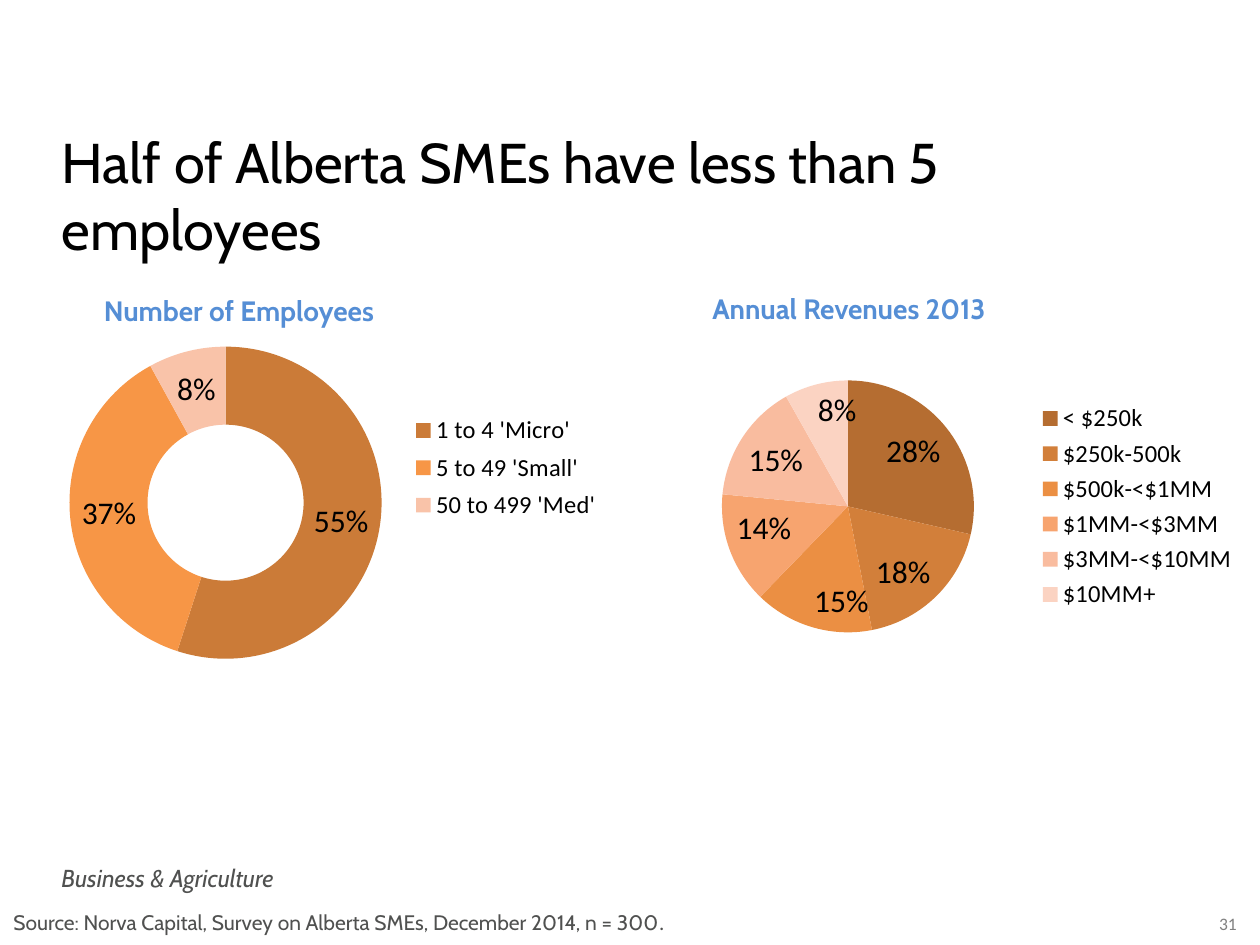
from lxml import etree
from pptx import Presentation
from pptx import util as u
from pptx.chart import data as chart_data
from pptx.dml.color import RGBColor
from pptx.enum import chart as ch, text
from pptx.oxml import ns

PX = 914400 / 126
BLACK = RGBColor(0x00, 0x00, 0x00)
BLUE = RGBColor(0x55, 0x8E, 0xD5)
DARK = RGBColor(0x50, 0x51, 0x50)
GREY = RGBColor(0x80, 0x80, 0x80)
EMPLOYEE_COLORS = [RGBColor(0xCB, 0x7B, 0x38), RGBColor(0xF7, 0x96, 0x46),
                   RGBColor(0xF9, 0xC3, 0xA9)]
REVENUE_COLORS = [RGBColor(0xB5, 0x6D, 0x31), RGBColor(0xD2, 0x7F, 0x3A),
                  RGBColor(0xEB, 0x8F, 0x43), RGBColor(0xF7, 0xA4, 0x6F),
                  RGBColor(0xF9, 0xBC, 0x9F), RGBColor(0xFB, 0xD3, 0xC2)]


def px(*lengths):
    return [u.Emu(round(n * PX)) for n in lengths]


def set_layout(parent, index, box, inner=False):
    """Place a chart part by fractions of the chart area."""
    for old in parent.findall(ns.qn("c:layout")):
        parent.remove(old)
    layout = etree.Element(ns.qn("c:layout"))
    manual = etree.SubElement(layout, ns.qn("c:manualLayout"))
    items = [("layoutTarget", "inner")] if inner else []
    items += [("xMode", "edge"), ("yMode", "edge"), *zip("xywh", box)]
    for tag, value in items:
        etree.SubElement(manual, ns.qn("c:" + tag)).set("val", str(value))
    parent.insert(index, layout)


prs = Presentation()
prs.slide_width, prs.slide_height = px(1260, 945)
s = prs.slides.add_slide(prs.slide_layouts[5])

# Title
title = s.shapes.title
title.left, title.top, title.width, title.height = px(49, 121, 1162, 100)
tf = title.text_frame
tf.word_wrap = True
tf.auto_size = text.MSO_AUTO_SIZE.NONE
tf.vertical_anchor = text.MSO_ANCHOR.TOP
p = tf.paragraphs[0]
p.alignment = text.PP_ALIGN.LEFT
r = p.add_run()
r.text = "Half of Alberta SMEs have less than 5 employees"
r.font.name, r.font.size = "Cabin", u.Pt(32)
r.font.color.rgb = BLACK

# Charts: type, box, plot area, legend area, colours, label position, data
charts = [
    (ch.XL_CHART_TYPE.DOUGHNUT, (29, 285, 578, 411), (0.07, 0.12, 0.54, 0.82),
     (0.66, 0.3, 0.33, 0.29), EMPLOYEE_COLORS, None,
     {"1 to 4 'Micro'": 0.55, "5 to 49 'Small'": 0.37, "50 to 499 'Med'": 0.08}),
    (ch.XL_CHART_TYPE.PIE, (650, 252, 600, 509), (0.12, 0.25, 0.42, 0.5),
     None, REVENUE_COLORS, ch.XL_LABEL_POSITION.INSIDE_END,
     {"< $250k": 0.28, "$250k-500k": 0.18, "$500k-<$1MM": 0.15,
      "$1MM-<$3MM": 0.14, "$3MM-<$10MM": 0.15, "$10MM+": 0.08}),
]
for kind, box, plot_box, legend_box, colors, position, values in charts:
    data = chart_data.CategoryChartData(number_format="0%")
    data.categories = list(values)
    data.add_series("Series 1", list(values.values()))
    chart = s.shapes.add_chart(kind, *px(*box), data).chart
    chart.has_title = False
    chart.font.name, chart.font.size = "Cabin", u.Pt(18)
    chart.font.color.rgb = BLACK

    chart.has_legend = True
    legend = chart.legend
    legend.position = ch.XL_LEGEND_POSITION.RIGHT
    legend.include_in_layout = False
    legend.font.name, legend.font.size = "Calibri", u.Pt(14)

    plot = chart.plots[0]
    plot.vary_by_categories = True
    for i, color in enumerate(colors):
        fill = plot.series[0].points[i].format.fill
        fill.solid()
        fill.fore_color.rgb = color

    plot.has_data_labels = True
    labels = plot.data_labels
    labels.show_value = True
    labels.show_percentage = False
    labels.number_format, labels.number_format_is_linked = "0%", False
    labels.font.name, labels.font.size = "Calibri", u.Pt(18)
    if position is not None:
        labels.position = position

    chart_xml = chart.element.find(ns.qn("c:chart"))
    set_layout(chart_xml.find(ns.qn("c:plotArea")), 0, plot_box, inner=True)
    if legend_box:
        set_layout(chart_xml.find(ns.qn("c:legend")), 1, legend_box)

# Chart headings, section name, source and page number
LEFT, CENTER = text.PP_ALIGN.LEFT, text.PP_ALIGN.CENTER
notes = [
    ((67, 287, 344, 47), CENTER, 16, BLUE, True, False,
     [("Number of Employees", "Cabin")]),
    ((677, 285, 344, 47), CENTER, 16, BLUE, True, False,
     [("Annual Revenues 2013", "Cabin")]),
    ((49, 857, 354, 43), LEFT, 14, DARK, False, True,
     [("Business & Agriculture", "Cabin")]),
    ((1, 903, 1173, 38), LEFT, 12, DARK, False, False,
     [("Source: Norva Capital, Survey on Alberta SMEs, December 2014, n = 300",
       "Cabin"), (".", "Calibri")]),
    ((1197, 907, 62, 34), CENTER, 10, GREY, False, False, [("31", "Calibri")]),
]
for box, align, size, color, bold, italic, runs in notes:
    tf = s.shapes.add_textbox(*px(*box)).text_frame
    tf.word_wrap = True
    p = tf.paragraphs[0]
    p.alignment = align
    for words, font in runs:
        r = p.add_run()
        r.text = words
        r.font.name, r.font.size = font, u.Pt(size)
        r.font.bold, r.font.italic = bold, italic
        r.font.color.rgb = color

prs.save("out.pptx")
